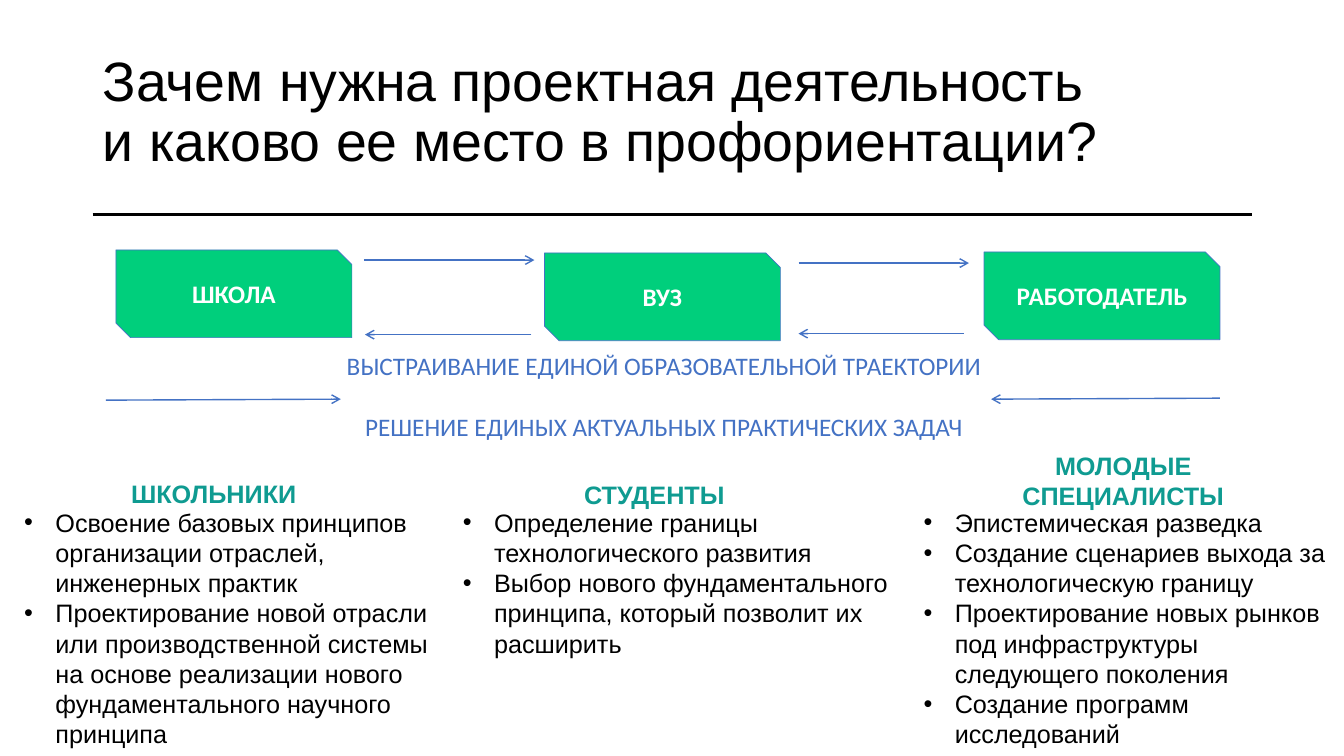
from dataclasses import dataclass

from pptx import Presentation
from pptx.dml.color import RGBColor
from pptx.enum.shapes import MSO_CONNECTOR as CONNECTOR, MSO_SHAPE as SHAPE
from pptx.enum.text import MSO_ANCHOR as ANCHOR, MSO_AUTO_SIZE as AUTO_SIZE, PP_ALIGN as ALIGN
from pptx.oxml.ns import qn
from pptx.util import Emu, Pt
from lxml.etree import SubElement

EMU_PER_PX = 9144  # 100 px to the inch


@dataclass(frozen=True)
class Theme:
    heading_font: str = "Arial"
    diagram_font: str = "Calibri"
    black: str = "000000"
    white: str = "FFFFFF"
    blue: str = "4472C4"
    green: str = "00CF7C"
    teal: str = "0F9B91"
    title_size: float = 39.6
    text_size: float = 18
    rule_width: float = 2.25
    arrow_width: float = 1
    outline_width: float = 0.5


THEME = Theme()

TITLE = "Зачем нужна проектная деятельность и каково ее место в профориентации?"

STAGE_SIZE = (234, 87)
STAGES = [
    ("ШКОЛА", 115, 248),
    ("ВУЗ", 540, 251),
    ("РАБОТОДАТЕЛЬ", 976, 250),
]

# Start x, start y, end x, end y
ARROWS = [
    (361, 258, 530, 258),
    (792, 261, 961, 261),
    (956, 331, 792, 331),
    (527, 332, 362, 332),
    (1210, 395, 983, 396),
    (105, 397, 338, 396),
]

SHARED_GOALS = [
    "ВЫСТРАИВАНИЕ ЕДИНОЙ ОБРАЗОВАТЕЛЬНОЙ ТРАЕКТОРИИ",
    "РЕШЕНИЕ ЕДИНЫХ АКТУАЛЬНЫХ ПРАКТИЧЕСКИХ ЗАДАЧ",
]

# Heading lines, heading box, list box, list items
AUDIENCES = [
    (["ШКОЛЬНИКИ"], (117, 470, 190, 40), (14, 498, 452, 252), [
        "Освоение базовых принципов организации отраслей, инженерных практик",
        "Проектирование новой отрасли или производственной системы на основе "
        "реализации нового фундаментального научного принципа",
    ]),
    (["СТУДЕНТЫ"], (567, 471, 164, 40), (449, 498, 452, 162), [
        "Определение границы технологического развития",
        "Выбор нового фундаментального принципа, который позволит их расширить",
    ]),
    (["МОЛОДЫЕ", "СПЕЦИАЛИСТЫ"], (1003, 442, 222, 71), (906, 498, 427, 252), [
        "Эпистемическая разведка",
        "Создание сценариев выхода за технологическую границу",
        "Проектирование новых рынков под инфраструктуры следующего поколения",
        "Создание программ исследований",
    ]),
]


def px(*lengths):
    return [Emu(length * EMU_PER_PX) for length in lengths]


def rgb(color):
    return RGBColor.from_string(color)


def place(shape, box):
    shape.left, shape.top, shape.width, shape.height = px(*box)


def style(paragraph, font, size, color, bold=False, align=ALIGN.CENTER):
    paragraph.alignment = align
    paragraph.font.name = font
    paragraph.font.size = Pt(size)
    paragraph.font.color.rgb = rgb(color)
    paragraph.font.bold = bold


def fill_title(title):
    place(title, (92, 40, 1008, 145))
    frame = title.text_frame
    frame.text = TITLE
    frame.auto_size = AUTO_SIZE.NONE
    frame.vertical_anchor = ANCHOR.MIDDLE
    paragraph = frame.paragraphs[0]
    paragraph.line_spacing = 0.9
    style(paragraph, THEME.heading_font, THEME.title_size, THEME.black, align=ALIGN.LEFT)


def add_bullet(paragraph):
    indent = px(31)[0]
    properties = paragraph._p.get_or_add_pPr()
    properties.set("marL", str(indent))
    properties.set("indent", str(-indent))
    SubElement(properties, qn("a:buFont")).set("typeface", THEME.heading_font)
    SubElement(properties, qn("a:buChar")).set("char", "•")


def fill_list(placeholder, box, items):
    place(placeholder, box)
    frame = placeholder.text_frame
    frame.text = "\n".join(items)
    frame.auto_size = AUTO_SIZE.NONE
    frame.vertical_anchor = ANCHOR.TOP
    for paragraph in frame.paragraphs:
        add_bullet(paragraph)
        paragraph.space_before = Pt(0)
        style(paragraph, THEME.heading_font, THEME.text_size, THEME.black, align=ALIGN.LEFT)


def add_caption(slide, box, lines, font, color, bold=False, gap=0):
    """Add centred lines that do not wrap, with gap points between them."""
    frame = slide.shapes.add_textbox(*px(*box)).text_frame
    frame.word_wrap = False
    frame.text = "\n".join(lines)
    for paragraph in frame.paragraphs:
        style(paragraph, font, THEME.text_size, color, bold)
    for paragraph in frame.paragraphs[1:]:
        paragraph.space_before = Pt(gap)


def add_stage(slide, label, left, top):
    shape = slide.shapes.add_shape(SHAPE.SNIP_2_DIAG_RECTANGLE, *px(left, top, *STAGE_SIZE))
    shape.shadow.inherit = False
    shape.fill.solid()
    shape.fill.fore_color.rgb = rgb(THEME.green)
    shape.line.color.rgb = rgb(THEME.blue)
    shape.line.width = Pt(THEME.outline_width)
    frame = shape.text_frame
    frame.text = label
    frame.vertical_anchor = ANCHOR.MIDDLE
    style(frame.paragraphs[0], THEME.diagram_font, THEME.text_size, THEME.white, bold=True)


def add_line(slide, ends, color, width, arrow=False):
    connector = slide.shapes.add_connector(CONNECTOR.STRAIGHT, *px(*ends))
    connector.line.color.rgb = rgb(color)
    connector.line.width = Pt(width)
    properties = connector.element.spPr
    if arrow:
        SubElement(properties.find(qn("a:ln")), qn("a:tailEnd")).set("type", "arrow")
    SubElement(properties, qn("a:effectLst"))


def main():
    presentation = Presentation()
    presentation.slide_width, presentation.slide_height = px(1333, 750)
    comparison_layout = presentation.slide_layouts[4]
    slide = presentation.slides.add_slide(comparison_layout)

    title, *bodies = slide.placeholders
    fill_title(title)
    add_line(slide, (92, 213, 1242, 213), THEME.black, THEME.rule_width)

    for body, (heading, heading_box, list_box, items) in zip(bodies, AUDIENCES):
        add_caption(slide, heading_box, heading, THEME.heading_font, THEME.teal, bold=True)
        fill_list(body, list_box, items)
    for unused in bodies[len(AUDIENCES):]:
        unused.element.getparent().remove(unused.element)

    for stage in STAGES:
        add_stage(slide, *stage)
    for ends in ARROWS:
        add_line(slide, ends, THEME.blue, THEME.arrow_width, arrow=True)
    add_caption(slide, (327, 343, 663, 101), SHARED_GOALS, THEME.diagram_font, THEME.blue, gap=22)

    presentation.save("out.pptx")


if __name__ == "__main__":
    main()
